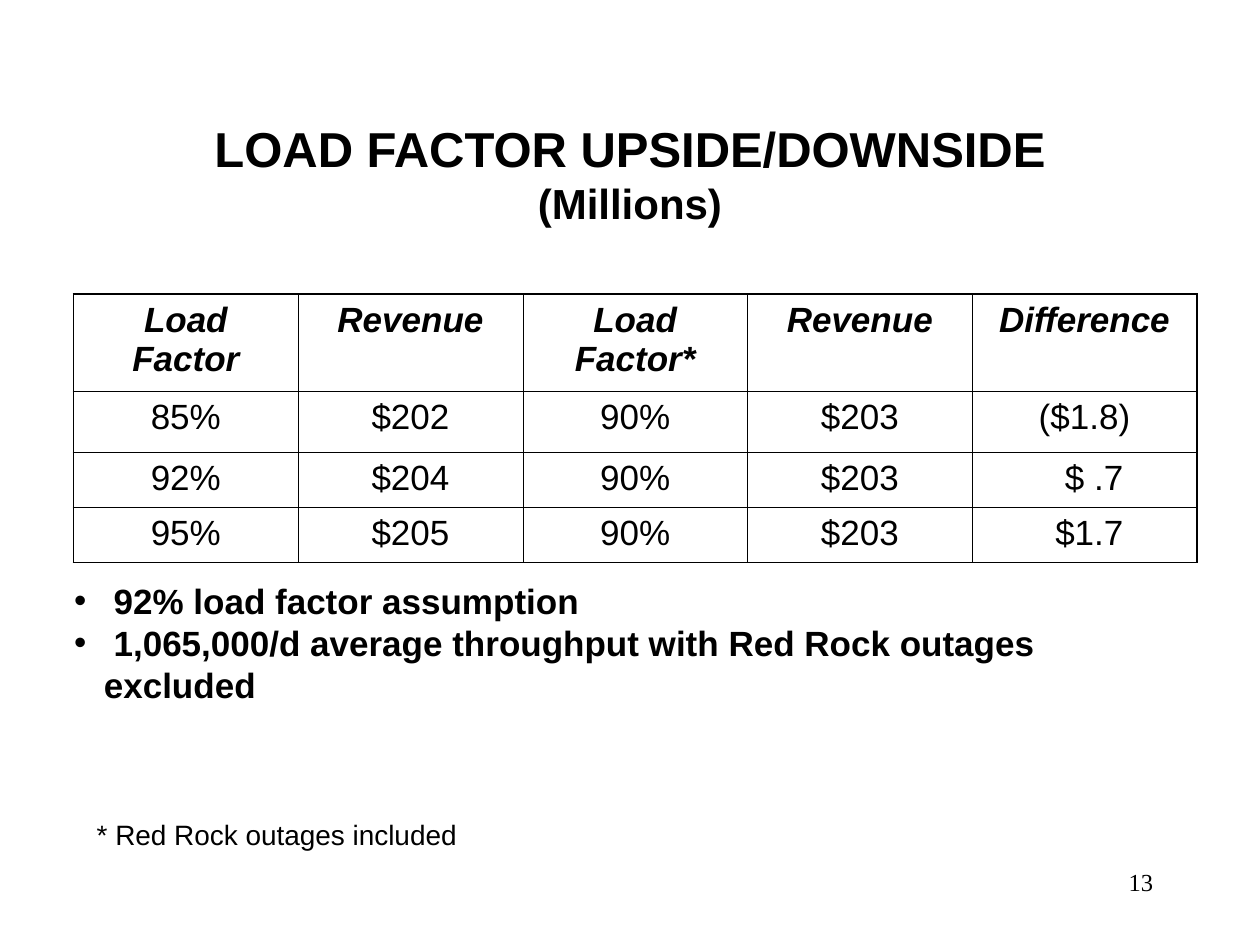
from dataclasses import dataclass

from lxml import etree
from pptx import Presentation
from pptx.dml.color import RGBColor
from pptx.enum.text import MSO_ANCHOR, PP_ALIGN
from pptx.oxml.ns import qn
from pptx.util import Pt

LEFT, CENTER, RIGHT = PP_ALIGN.LEFT, PP_ALIGN.CENTER, PP_ALIGN.RIGHT
MIDDLE = MSO_ANCHOR.MIDDLE


@dataclass(frozen=True)
class Theme:
    ink: str = "000000"
    sans: str = "Arial"
    serif: str = "Times New Roman"
    title: int = 28
    subtitle: int = 24
    body: int = 20
    footnote: int = 16
    page: int = 14
    outer_line: float = 1.08
    inner_line: float = 0.45


THEME = Theme()


def style(paragraph, size, align=LEFT, bold=False, italic=False, face=THEME.sans):
    paragraph.alignment = align
    for run in paragraph.runs:
        font = run.font
        font.name, font.size = face, Pt(size)
        font.bold, font.italic = bold, italic
        font.color.rgb = RGBColor.from_string(THEME.ink)


def add_text(left, top, width, height, text):
    frame = slide.shapes.add_textbox(Pt(left), Pt(top), Pt(width), Pt(height)).text_frame
    frame.word_wrap = True
    frame.text = text
    return frame


prs = Presentation()
prs.slide_width, prs.slide_height = Pt(720), Pt(540)
slide = prs.slides.add_slide(prs.slide_layouts[6])

# Title
title = add_text(54, 54, 612, 90, "LOAD FACTOR UPSIDE/DOWNSIDE\v(Millions)")
title.vertical_anchor = MIDDLE
style(title.paragraphs[0], THEME.title, CENTER, bold=True)
title.paragraphs[0].runs[1].font.size = Pt(THEME.subtitle)

# Revenue table
revenue_rows = [
    ["Load Factor", "Revenue", "Load Factor*", "Revenue", "Difference"],
    ["85%", "$202", "90%", "$203", "($1.8)"],
    ["92%", "$204", "90%", "$203", "  $ .7"],
    ["95%", "$205", "90%", "$203", " $1.7"],
]
row_heights = [55.6, 35, 31.4, 31.4]
column_width = 128.4
last_row, last_column = len(revenue_rows) - 1, len(revenue_rows[0]) - 1

revenue = slide.shapes.add_table(
    last_row + 1, last_column + 1, Pt(42), Pt(168),
    Pt(column_width * (last_column + 1)), Pt(sum(row_heights)),
).table
revenue.horz_banding = False
for column in revenue.columns:
    column.width = Pt(column_width)

for r, (values, height) in enumerate(zip(revenue_rows, row_heights)):
    revenue.rows[r].height = Pt(height)
    for c, value in enumerate(values):
        cell = revenue.cell(r, c)
        cell.text_frame.text = value
        paragraph = cell.text_frame.paragraphs[0]
        paragraph.space_before = Pt(5)
        style(paragraph, THEME.body, CENTER, bold=r == 0, italic=r == 0)

        outer_edges = {"lnL": c == 0, "lnR": c == last_column,
                       "lnT": r == 0, "lnB": r == last_row}
        properties = cell._tc.get_or_add_tcPr()
        for edge, is_outer in outer_edges.items():
            width = Pt(THEME.outer_line if is_outer else THEME.inner_line)
            line = etree.SubElement(properties, qn(f"a:{edge}"), w=str(width))
            line_fill = etree.SubElement(line, qn("a:solidFill"))
            etree.SubElement(line_fill, qn("a:srgbClr"), val=THEME.ink)
        cell.fill.background()

# Assumptions
assumptions = add_text(
    35.3, 327.6, 645.8, 55.4,
    " 92% load factor assumption\n"
    " 1,065,000/d average throughput with Red Rock outages excluded",
)
for paragraph in assumptions.paragraphs:
    style(paragraph, THEME.body, bold=True)
    properties = paragraph._p.get_or_add_pPr()
    properties.set("marL", str(Pt(17)))
    properties.set("indent", str(Pt(-17)))
    etree.SubElement(properties, qn("a:buFont"), typeface=THEME.sans)
    etree.SubElement(properties, qn("a:buChar"), char="•")

# Footnote and page number
footnote = add_text(48.2, 463.7, 220.3, 26.6, "* Red Rock outages included")
footnote.word_wrap = False
style(footnote.paragraphs[0], THEME.footnote)
page_number = add_text(516, 492, 150, 36, "13")
style(page_number.paragraphs[0], THEME.page, RIGHT, face=THEME.serif)

prs.save("out.pptx")
